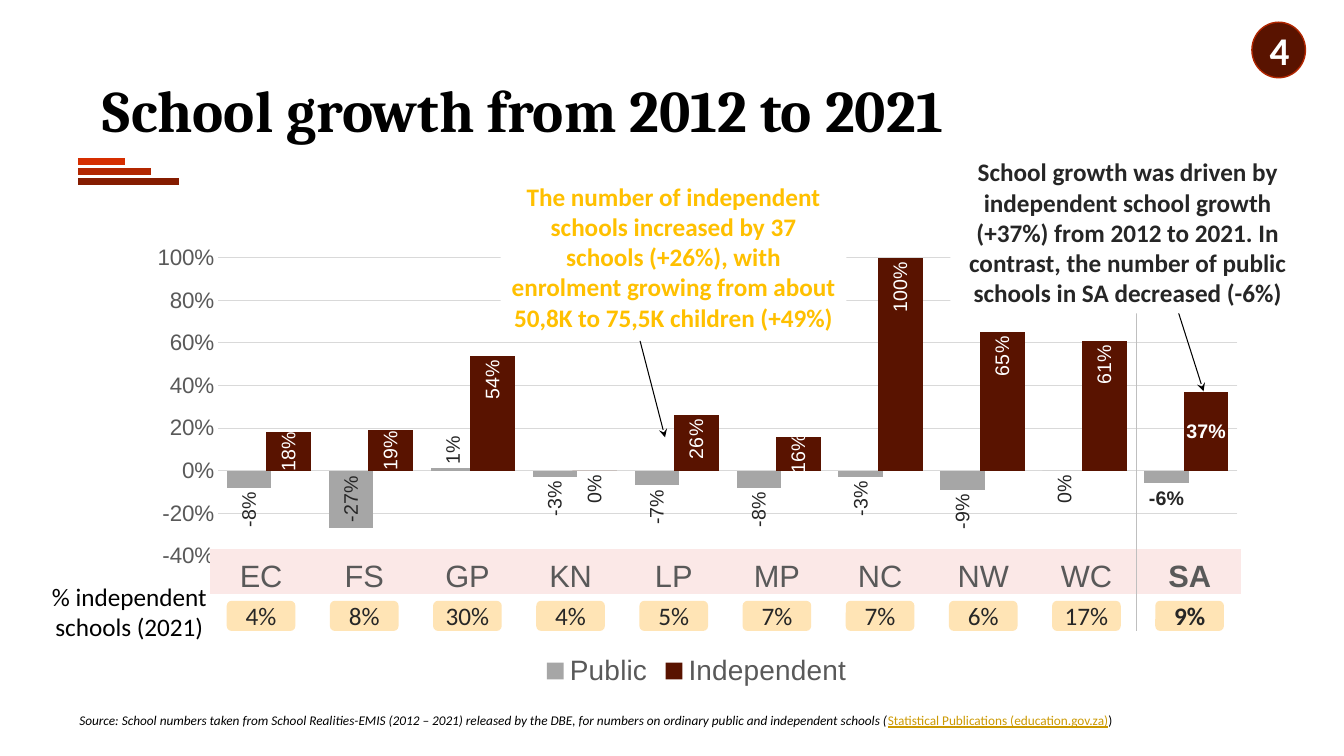
import pptx
import pptx.chart.data
import pptx.dml.color
import pptx.enum.chart
import pptx.enum.shapes
import pptx.enum.text
import pptx.oxml
import pptx.oxml.ns
import pptx.util

Cm, Pt = pptx.util.Cm, pptx.util.Pt
LABEL_POS = pptx.enum.chart.XL_LABEL_POSITION
SHAPE = pptx.enum.shapes.MSO_SHAPE
ALIGN = pptx.enum.text.PP_ALIGN
ANCHOR = pptx.enum.text.MSO_ANCHOR

COLORS = {
    "maroon": "591300", "stripe_dark": "851C00", "stripe_mid": "B22600",
    "stripe_light": "D62E00", "gray": "A6A6A6", "grid": "D9D9D9",
    "divider": "BFBFBF", "axis": "595959", "dark": "262626", "black": "000000",
    "white": "FFFFFF", "pink": "FBE8E7", "pill": "FFE4B5", "gold": "FFC000",
    "link": "CC9900",
}
PROVINCES = ["EC", "FS", "GP", "KN", "LP", "MP", "NC", "NW", "WC", "SA"]
SHARES = ["4%", "8%", "30%", "4%", "5%", "7%", "7%", "6%", "17%", "9%"]
PUBLIC = [-0.08, -0.27, 0.01, -0.03, -0.07, -0.08, -0.03, -0.09, 0, -0.06]
INDEPENDENT = [0.18, 0.19, 0.54, 0, 0.26, 0.16, 1, 0.65, 0.61, 0.37]
EC, FS, KN, MP, WC, SA = map(PROVINCES.index, ("EC", "FS", "KN", "MP", "WC", "SA"))
COL_W = 2.6


def rgb(name):
    return pptx.dml.color.RGBColor.from_string(COLORS[name])


def set_font(font, color, **values):
    for name, value in values.items():
        setattr(font, name, value)
    font.color.rgb = rgb(color)


def write(tf, runs, align=ALIGN.CENTER, anchor=ANCHOR.MIDDLE):
    """Fill a text frame with one paragraph of (text, colour, font values) runs."""
    tf.word_wrap = True
    tf.vertical_anchor = anchor
    p = tf.paragraphs[0]
    p.alignment = align
    for text, color, values in runs:
        r = p.add_run()
        r.text = text
        set_font(r.font, color, **{"name": "Calibri", **values})


def add_line(s, start, end, color, width, arrow=False):
    line = s.shapes.add_connector(
        pptx.enum.shapes.MSO_CONNECTOR.STRAIGHT, *map(Cm, start + end))
    line.line.color.rgb = rgb(color)
    line.line.width = Pt(width)
    if arrow:
        ln = line.line._get_or_add_ln()
        ln.append(pptx.oxml.parse_xml(
            f'<a:tailEnd {pptx.oxml.ns.nsdecls("a")} type="stealth"/>'))
    line._element.spPr.append(pptx.oxml.parse_xml(
        f'<a:effectLst {pptx.oxml.ns.nsdecls("a")}/>'))


def add_box(s, kind, box, fill, text, color, outline=None, **values):
    sp = s.shapes.add_shape(kind, *map(Cm, box))
    sp.shadow.inherit = False
    sp.fill.solid()
    sp.fill.fore_color.rgb = rgb(fill)
    if outline:
        sp.line.color.rgb = rgb(outline)
        sp.line.width = Pt(1)
    else:
        sp.line.fill.background()
    write(sp.text_frame, [(text, color, values)])


def add_title(s, box):
    title = s.shapes.title
    title.left, title.top, title.width, title.height = map(Cm, box)
    tf = title.text_frame
    write(tf, [("School growth from 2012 to 2021", "black",
                {"name": "Cambria", "size": Pt(42), "bold": True})], ALIGN.LEFT)
    tf.auto_size = pptx.enum.text.MSO_AUTO_SIZE.NONE
    tf.paragraphs[0].line_spacing = 0.9


def add_stripes(s, left, top):
    stripes = [("stripe_light", 1.19), ("stripe_mid", 1.85), ("stripe_dark", 2.54)]
    for i, (color, length) in enumerate(stripes):
        y = top + i * 0.25
        add_line(s, (left, y), (left + length, y), color, 5.5)


def format_labels(ser, color, position, exceptions):
    """Turn the labels upright; exceptions maps a point to (position, colour)."""
    labels = ser.data_labels
    labels.show_value = True
    labels.number_format = "0%"
    labels.number_format_is_linked = False
    labels.position = position
    set_font(labels.font, color, name="Arial", size=Pt(14))
    for i, (point_position, point_color) in exceptions.items():
        label = ser.points[i].data_label
        set_font(label.font, point_color, name="Arial", size=Pt(14), bold=i == SA)
        label.position = point_position
    for body in labels._element.xpath(".//a:bodyPr"):
        body.set("rot", "-5400000")
        body.set("vert", "horz")
    for body in labels._element.xpath(f"./c:dLbl[c:idx/@val={SA}]//a:bodyPr"):
        body.set("rot", "0")


def add_growth_chart(s, box):
    data = pptx.chart.data.CategoryChartData(number_format="0%")
    data.categories = [str(i + 1) for i in range(len(PROVINCES))]
    data.add_series("Public", PUBLIC)
    data.add_series("Independent", INDEPENDENT)
    chart = s.shapes.add_chart(
        pptx.enum.chart.XL_CHART_TYPE.COLUMN_CLUSTERED, *map(Cm, box), data).chart
    set_font(chart.font, "black", name="Arial", size=Pt(14))
    chart.has_title = False
    chart.has_legend = True
    chart.legend.position = pptx.enum.chart.XL_LEGEND_POSITION.BOTTOM
    chart.legend.include_in_layout = False
    set_font(chart.legend.font, "axis", name="Arial", size=Pt(20))

    chart.category_axis.visible = False
    axis = chart.value_axis
    axis.minimum_scale, axis.maximum_scale, axis.major_unit = -0.4, 1, 0.2
    axis.major_tick_mark = pptx.enum.chart.XL_TICK_MARK.NONE
    axis.format.line.fill.background()
    axis.major_gridlines.format.line.color.rgb = rgb("grid")
    axis.major_gridlines.format.line.width = Pt(0.75)
    axis.tick_labels.number_format = "0%"
    axis.tick_labels.number_format_is_linked = False
    set_font(axis.tick_labels.font, "axis", name="Arial", size=Pt(16))

    plot = chart.plots[0]
    plot.gap_width, plot.overlap, plot.vary_by_categories = 40, 11, False
    for ser, color in zip(plot.series, ("gray", "maroon")):
        ser.format.fill.solid()
        ser.format.fill.fore_color.rgb = rgb(color)
        ser.invert_if_negative = False
    public, independent = plot.series
    format_labels(public, "dark", LABEL_POS.OUTSIDE_END, {
        FS: (LABEL_POS.CENTER, "dark"), WC: (LABEL_POS.INSIDE_END, "dark"),
        SA: (LABEL_POS.OUTSIDE_END, "dark")})
    centred = {i: (LABEL_POS.CENTER, "white") for i in (EC, FS, MP, SA)}
    format_labels(independent, "white", LABEL_POS.INSIDE_END,
                  {**centred, KN: (LABEL_POS.INSIDE_END, "dark")})

    area = chart._chartSpace.chart.plotArea
    for old in area.xpath("./c:layout"):
        area.remove(old)
    sizes = zip("xywh", (0.069, 0.046, 0.918, 0.654))
    area.insert(0, pptx.oxml.parse_xml(
        f'<c:layout {pptx.oxml.ns.nsdecls("c")}><c:manualLayout>'
        '<c:layoutTarget val="inner"/><c:xMode val="edge"/><c:yMode val="edge"/>'
        + "".join(f'<c:{name} val="{value}"/>' for name, value in sizes)
        + "</c:manualLayout></c:layout>"))


def add_province_row(s, left, top, height):
    table = s.shapes.add_table(1, len(PROVINCES), Cm(left), Cm(top),
                               Cm(COL_W * len(PROVINCES)), Cm(height)).table
    table.first_row = table.horz_banding = False
    style = table._tbl.tblPr.find(pptx.oxml.ns.qn("a:tableStyleId"))
    style.text = "{2D5ABB26-0587-4C30-8999-92F81FD0307C}"
    for i, name in enumerate(PROVINCES):
        table.columns[i].width = Cm(COL_W)
        cell = table.cell(0, i)
        cell.fill.solid()
        cell.fill.fore_color.rgb = rgb("pink")
        cell.margin_left = cell.margin_right = cell.margin_top = Cm(0.03)
        cell.margin_bottom = 0
        cell.vertical_anchor = ANCHOR.BOTTOM
        p = cell.text_frame.paragraphs[0]
        p.alignment = ALIGN.CENTER
        r = p.add_run()
        r.text = name
        set_font(r.font, "axis", name="Arial", size=Pt(22), bold=i == SA)


def add_share_row(s, left, top, width, height):
    """Place one pill centred under each province column."""
    for i, share in enumerate(SHARES):
        x = left + i * COL_W + (COL_W - width) / 2
        add_box(s, SHAPE.ROUNDED_RECTANGLE, (x, top, width, height), "pill",
                share, "dark", size=Pt(18), bold=i == SA)


def add_share_caption(s, box):
    tf = s.shapes.add_textbox(*map(Cm, box)).text_frame
    tf.margin_left = tf.margin_right = 0
    write(tf, [("% independent schools (2021)", "black", {"size": Pt(18)})])


def add_source(s, box):
    tf = s.shapes.add_textbox(*map(Cm, box)).text_frame
    size = Pt(9.5)
    write(tf, [
        ("Source: School numbers taken from School Realities-EMIS (2012 – 2021) "
         "released by the DBE, for numbers on ordinary public and independent "
         "schools (", "black", {"size": size, "italic": True}),
        ("Statistical Publications (education.gov.za)", "link",
         {"size": size, "underline": True}),
        (")", "black", {"size": size}),
    ], ALIGN.LEFT, ANCHOR.TOP)


def add_callout(s, box, text, color, arrow_start, arrow_end):
    add_line(s, arrow_start, arrow_end, "black", 0.75, arrow=True)
    add_box(s, SHAPE.RECTANGLE, box, "white", text, color, size=Pt(18), bold=True)


def main():
    prs = pptx.Presentation()
    prs.slide_width, prs.slide_height = Cm(33.87), Cm(19.05)
    s = prs.slides.add_slide(prs.slide_layouts.get_by_name("Title Only"))
    left = 5.28
    add_title(s, (2.34, 1.02, 29.21, 3.68))
    add_stripes(s, 1.96, 4.07)
    add_growth_chart(s, (3.56, 5.97, 27.99, 11.48))
    add_source(s, (1.75, 17.83, 30.33, 1.07))
    add_province_row(s, left, 13.84, 1.12)
    add_box(s, SHAPE.OVAL, (31.55, 0.56, 1.35, 1.4), "maroon", "4", "white",
            outline="stripe_mid", size=Pt(28), bold=True)
    add_share_row(s, left, 15.14, 1.73, 0.76)
    add_share_caption(s, (1.24, 14.6, 4.04, 1.6))
    add_line(s, (28.65, 5.97), (28.65, 15.9), "divider", 0.75)
    add_callout(s, (23.95, 3.81, 8.94, 4.09),
                "School growth was driven by independent school growth (+37%) from "
                "2012 to 2021. In contrast, the number of public schools in SA "
                "decreased (-6%)", "dark", (29.69, 7.85), (30.33, 9.86))
    add_callout(s, (12.62, 4.42, 8.71, 4.09),
                "The number of independent schools increased by 37 schools (+26%), "
                "with enrolment growing from about 50,8K to 75,5K children (+49%)",
                "gold", (16.13, 8.59), (16.76, 11.02))
    prs.save("out.pptx")


if __name__ == "__main__":
    main()
